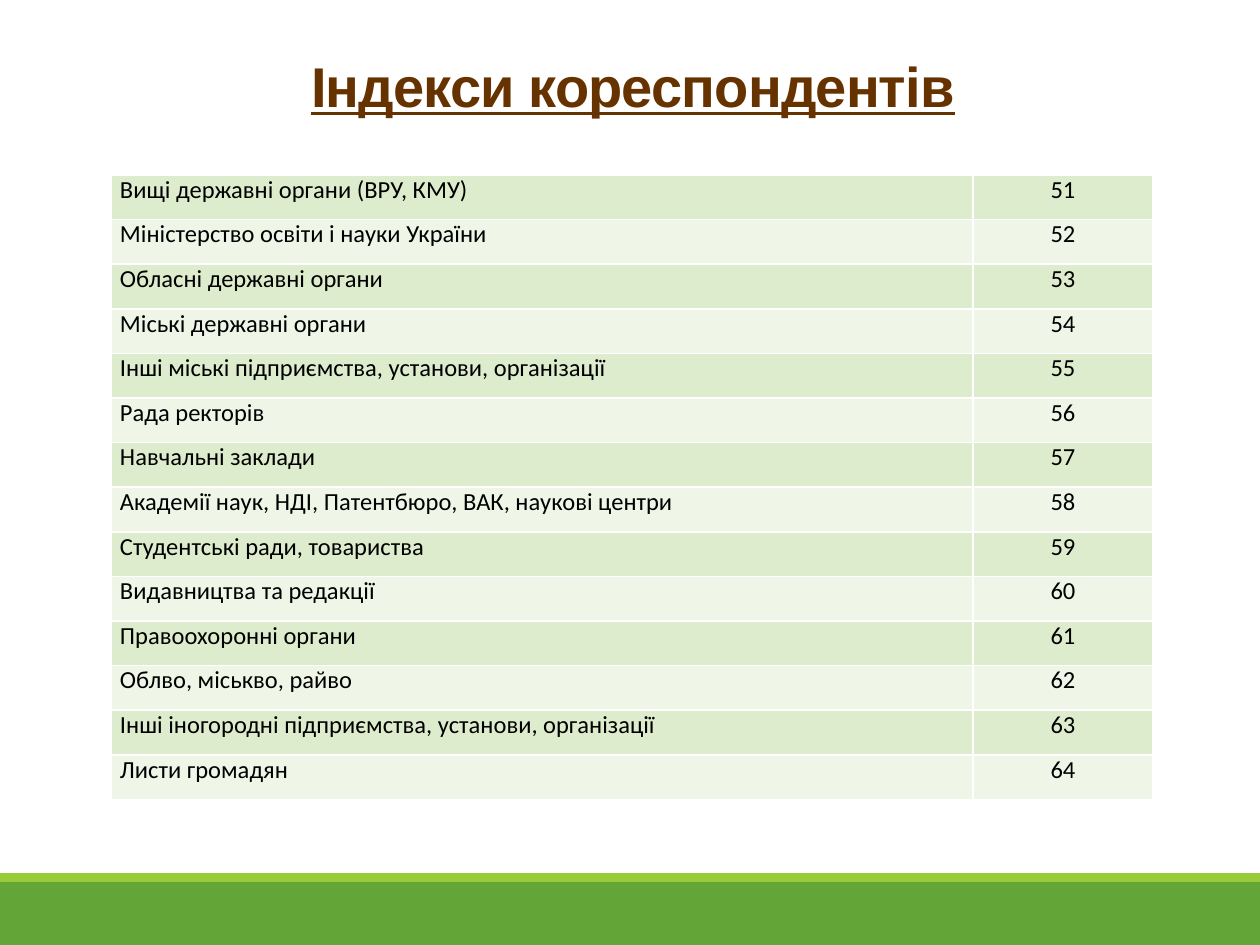
import pptx
import pptx.util
import pptx.dml.color
import pptx.enum.shapes
import pptx.enum.text
import pptx.oxml
import pptx.oxml.ns

RGBColor = pptx.dml.color.RGBColor
PP_ALIGN = pptx.enum.text.PP_ALIGN

TITLE = "Індекси кореспондентів"
FIRST_INDEX = 51
CORRESPONDENTS = [
    "Вищі державні органи (ВРУ, КМУ)",
    "Міністерство освіти і науки України",
    "Обласні державні органи",
    "Міські державні органи",
    "Інші міські підприємства, установи, організації",
    "Рада ректорів",
    "Навчальні заклади",
    "Академії наук, НДІ, Патентбюро, ВАК, наукові центри",
    "Студентські ради, товариства",
    "Видавництва та редакції",
    "Правоохоронні органи",
    "Облво, міськво, райво",
    "Інші іногородні підприємства, установи, організації",
    "Листи громадян",
]

BROWN = RGBColor(0x66, 0x33, 0x00)
BLACK = RGBColor(0x00, 0x00, 0x00)
GREEN = RGBColor(0x63, 0xA5, 0x37)
LIME = RGBColor(0x99, 0xCB, 0x38)
ROW_FILLS = [RGBColor(0xDE, 0xEC, 0xCE), RGBColor(0xEF, 0xF6, 0xE8)]

WIDTH, HEIGHT = 1260, 945
BANDS = [(882, 63, GREEN), (873, 9, LIME)]
TITLE_BOX = (113, 39, 1040, 86)
TABLE_LEFT, TABLE_TOP, TABLE_HEIGHT = 111, 175, 625
COLUMNS = [(862, PP_ALIGN.LEFT), (180, PP_ALIGN.CENTER)]
CELL_MARGIN = 9


def px(n):
    return pptx.util.Emu(n * 914400 // 126)


def style(p, name, size, color, align):
    p.alignment = align
    p.font.name = name
    p.font.size = pptx.util.Pt(size)
    p.font.color.rgb = color


def add_borders(cell):
    tcPr = cell._tc.get_or_add_tcPr()
    for side in "LRTB":
        tcPr.append(pptx.oxml.parse_xml(
            f'<a:ln{side} {pptx.oxml.ns.nsdecls("a")} w="12700"><a:solidFill>'
            f'<a:srgbClr val="FFFFFF"/></a:solidFill></a:ln{side}>'))


def add_band(s, top, height, color):
    sp = s.shapes.add_shape(pptx.enum.shapes.MSO_SHAPE.RECTANGLE,
                            0, px(top), px(WIDTH), px(height))
    sp.shadow.inherit = False
    sp.fill.solid()
    sp.fill.fore_color.rgb = color
    sp.line.fill.background()


def add_title(s):
    tf = s.shapes.add_textbox(*map(px, TITLE_BOX)).text_frame
    tf.word_wrap = True
    tf.vertical_anchor = pptx.enum.text.MSO_ANCHOR.BOTTOM
    p = tf.paragraphs[0]
    r = p.add_run()
    r.text = TITLE
    r._r.get_or_add_rPr().set("spc", "-50")
    style(p, "Arial", 32, BROWN, PP_ALIGN.CENTER)
    p.line_spacing = 0.85
    p.font.bold = True
    p.font.underline = True


def add_index_table(s):
    rows = [(name, str(i)) for i, name in enumerate(CORRESPONDENTS, FIRST_INDEX)]
    total = sum(width for width, _ in COLUMNS)
    table = s.shapes.add_table(len(rows), len(COLUMNS), px(TABLE_LEFT), px(TABLE_TOP),
                               px(total), px(TABLE_HEIGHT)).table
    table.first_row = False
    for column, (width, _) in zip(table.columns, COLUMNS):
        column.width = px(width)
    for i, row in enumerate(rows):
        for j, (text, (_, align)) in enumerate(zip(row, COLUMNS)):
            cell = table.cell(i, j)
            cell.margin_left = cell.margin_right = px(CELL_MARGIN)
            cell.margin_top = cell.margin_bottom = 0
            add_borders(cell)
            cell.fill.solid()
            cell.fill.fore_color.rgb = ROW_FILLS[i % 2]
            cell.text = text
            style(cell.text_frame.paragraphs[0], "Calibri", 14, BLACK, align)


def main():
    prs = pptx.Presentation()
    prs.slide_width, prs.slide_height = px(WIDTH), px(HEIGHT)
    s = prs.slides.add_slide(prs.slide_layouts[6])
    for band in BANDS:
        add_band(s, *band)
    add_title(s)
    add_index_table(s)
    prs.save("out.pptx")


if __name__ == "__main__":
    main()
